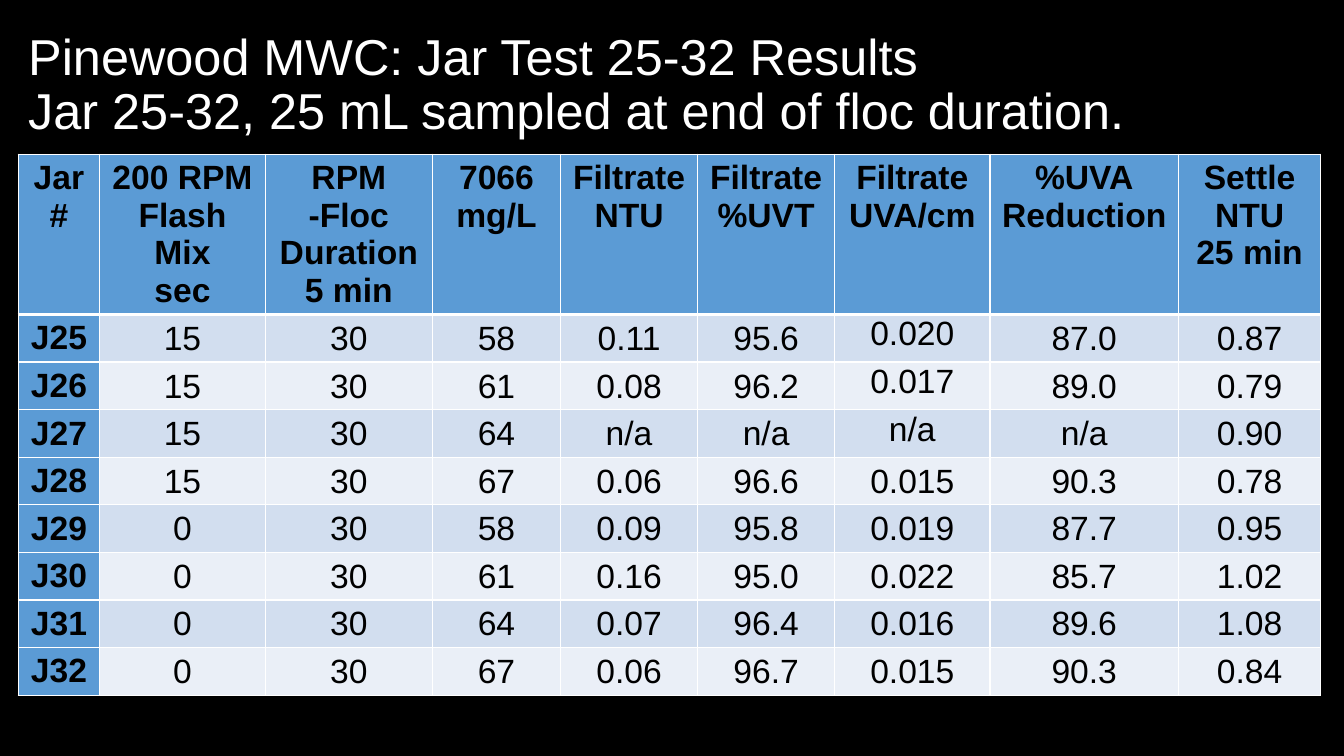
from lxml.etree import SubElement
from pptx import Presentation
from pptx.dml.color import RGBColor
from pptx.enum.text import MSO_ANCHOR as ANCHOR, MSO_AUTO_SIZE as AUTO, PP_ALIGN as ALIGN
from pptx.oxml import parse_xml
from pptx.oxml.ns import nsdecls, qn
from pptx.util import Inches, Pt

FONT = "Arial"
BLACK, WHITE, BLUE = "000000", "FFFFFF", "5B9BD5"
BANDS = ("D2DEEF", "EAEFF7")
COL_WIDTHS = (0.81, 1.64, 1.66, 1.27, 1.36, 1.36, 1.54, 1.87, 1.41)
HEADER_HEIGHT, ROW_HEIGHT = 1.59, 0.47
UVA_COL, TOP_ANCHORED_ROWS = 6, range(1, 4)

TITLE = ("Pinewood MWC: Jar Test 25-32 Results\v"
         "Jar 25-32, 25 mL sampled at end of floc duration.")
HEADERS = ("Jar\n#", "200 RPM\nFlash\nMix\nsec", "RPM\n-Floc\nDuration\n5 min",
           "7066\nmg/L", "Filtrate\nNTU", "Filtrate\n%UVT", "Filtrate\nUVA/cm",
           "%UVA\nReduction", "Settle\nNTU\n25 min")
RESULTS = (
    ("J25", "15", "30", "58", "0.11", "95.6", "0.020", "87.0", "0.87"),
    ("J26", "15", "30", "61", "0.08", "96.2", "0.017", "89.0", "0.79"),
    ("J27", "15", "30", "64", "n/a", "n/a", "n/a", "n/a", "0.90"),
    ("J28", "15", "30", "67", "0.06", "96.6", "0.015", "90.3", "0.78"),
    ("J29", "0", "30", "58", "0.09", "95.8", "0.019", "87.7", "0.95"),
    ("J30", "0", "30", "61", "0.16", "95.0", "0.022", "85.7", "1.02"),
    ("J31", "0", "30", "64", "0.07", "96.4", "0.016", "89.6", "1.08"),
    ("J32", "0", "30", "67", "0.06", "96.7", "0.015", "90.3", "0.84"),
)


def rgb(color):
    return RGBColor.from_string(color)


def format_text(tf, size, color, align, bold=False, spacing=None):
    for p in tf.paragraphs:
        p.alignment = align
        p.line_spacing = spacing
        for r in p.runs:
            r.font.name = FONT
            r.font.size = Pt(size)
            r.font.bold = bold
            r.font.color.rgb = rgb(color)


def set_borders(cell, color, bottom):
    """Draw 1 pt borders, with the bottom one as wide as given."""
    tc_pr = cell._tc.get_or_add_tcPr()
    for i, (side, width) in enumerate(zip("LRTB", (1, 1, 1, bottom))):
        ln = parse_xml(f'<a:ln{side} {nsdecls("a")} w="{Pt(width)}"/>')
        fill = SubElement(ln, qn("a:solidFill"))
        SubElement(fill, qn("a:srgbClr"), val=color)
        tc_pr.insert(i, ln)


def add_title(slide, left, top, width, height):
    title = slide.shapes.title
    title.left, title.top = Inches(left), Inches(top)
    title.width, title.height = Inches(width), Inches(height)
    tf = title.text_frame
    tf.text = TITLE
    tf.word_wrap = True
    tf.auto_size = AUTO.NONE
    tf.vertical_anchor = ANCHOR.MIDDLE
    format_text(tf, 36, WHITE, ALIGN.LEFT, spacing=0.9)


def fill_cell(cell, text, row, col):
    is_header, is_label = row == 0, row == 0 or col == 0
    cell.text = text
    format_text(cell.text_frame, 24, BLACK, ALIGN.CENTER, bold=is_label)
    cell.fill.solid()
    cell.fill.fore_color.rgb = rgb(BLUE if is_label else BANDS[(row - 1) % 2])
    if not is_label:
        cell.margin_left = cell.margin_right = cell.margin_top = Inches(0.01)
        cell.margin_bottom = 0
        at_top = col == UVA_COL and row in TOP_ANCHORED_ROWS
        cell.vertical_anchor = ANCHOR.TOP if at_top else ANCHOR.MIDDLE
    set_borders(cell, WHITE, bottom=3 if is_header else 1)


def add_results_table(slide, left, top):
    rows = (HEADERS,) + RESULTS
    heights = [HEADER_HEIGHT] + [ROW_HEIGHT] * len(RESULTS)
    table = slide.shapes.add_table(
        len(rows), len(HEADERS), Inches(left), Inches(top),
        Inches(sum(COL_WIDTHS)), Inches(sum(heights))).table
    table.first_col = True
    for column, width in zip(table.columns, COL_WIDTHS):
        column.width = Inches(width)
    for i, (values, height) in enumerate(zip(rows, heights)):
        table.rows[i].height = Inches(height)
        for j, text in enumerate(values):
            fill_cell(table.cell(i, j), text, i, j)


def main():
    prs = Presentation()
    prs.slide_width, prs.slide_height = Inches(13.33), Inches(7.5)
    slide = prs.slides.add_slide(prs.slide_layouts[5])
    slide.background.fill.solid()
    slide.background.fill.fore_color.rgb = rgb(BLACK)
    add_title(slide, 0.18, 0.13, 12.24, 1.45)
    add_results_table(slide, 0.18, 1.53)
    prs.save("out.pptx")


if __name__ == "__main__":
    main()
